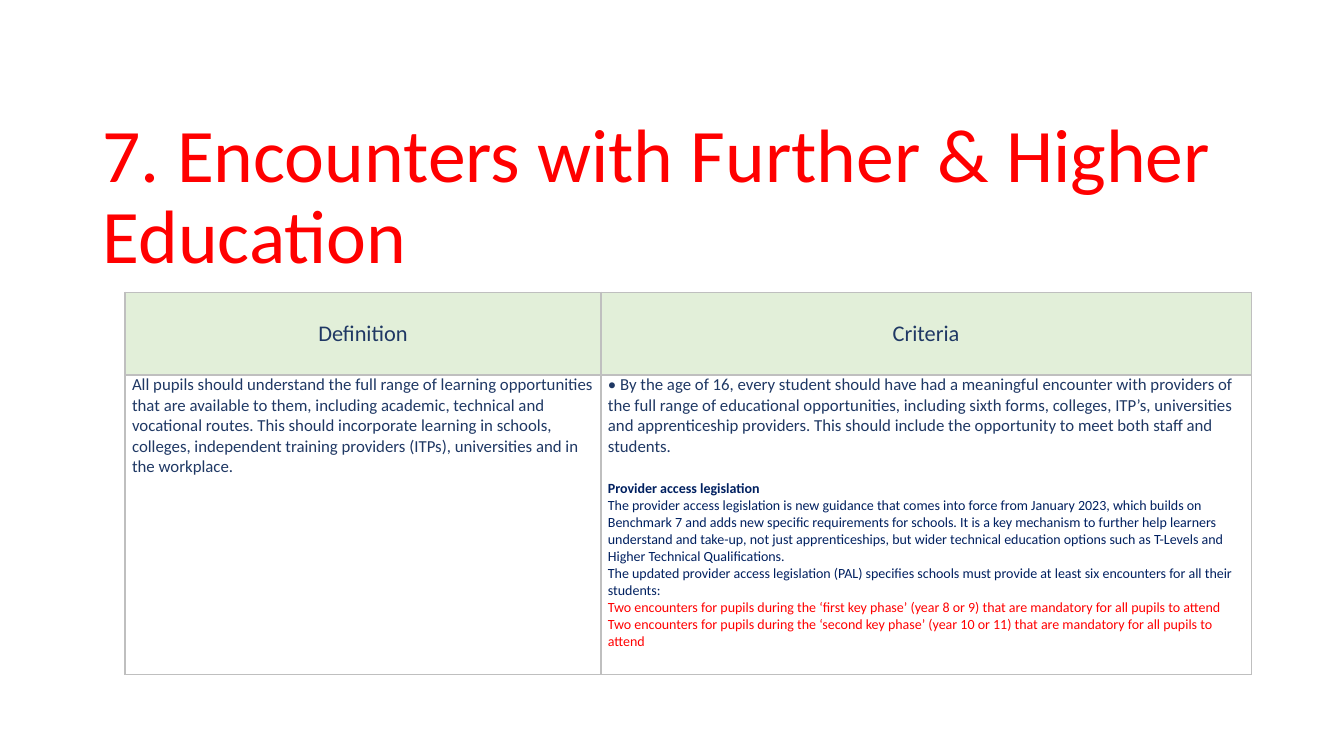
"""Build the slide on encounters with further and higher education."""
from lxml import etree
from pptx import Presentation
from pptx.dml.color import RGBColor
from pptx.enum.text import MSO_ANCHOR, PP_ALIGN
from pptx.oxml.ns import qn
from pptx.util import Inches, Pt

TOP, MIDDLE, BOTTOM = MSO_ANCHOR.TOP, MSO_ANCHOR.MIDDLE, MSO_ANCHOR.BOTTOM
LEFT, CENTER = PP_ALIGN.LEFT, PP_ALIGN.CENTER
RED = RGBColor(0xFF, 0x00, 0x00)
NAVY = RGBColor(0x1F, 0x38, 0x64)
INK = RGBColor(0x00, 0x20, 0x60)
GREEN = RGBColor(0xE2, 0xEF, 0xD9)
GREY = RGBColor(0xBF, 0xBF, 0xBF)
FONT = "Calibri"

TITLE = "7. Encounters with Further & Higher Education"
HEADS = ["Definition", "Criteria"]
COLS = [4.72, 6.45]
ROWS = [0.82, 2.97]
MEANING = (
    "All pupils should understand the full range of learning opportunities that "
    "are available to them, including academic, technical and vocational routes. "
    "This should incorporate learning in schools, colleges, independent training "
    "providers (ITPs), universities and in the workplace."
)
DUTY = (
    "• By the age of 16, every student should have had a meaningful encounter with "
    "providers of the full range of educational opportunities, including sixth "
    "forms, colleges, ITP’s, universities and apprenticeship providers. This should "
    "include the opportunity to meet both staff and students."
)
LAW = "Provider access legislation"
LAW_TEXT = [
    "The provider access legislation is new guidance that comes into force from "
    "January 2023, which builds on Benchmark 7 and adds new specific requirements "
    "for schools. It is a key mechanism to further help learners understand and "
    "take-up, not just apprenticeships, but wider technical education options such "
    "as T-Levels and Higher Technical Qualifications.",
    "The updated provider access legislation (PAL) specifies schools must provide "
    "at least six encounters for all their students:",
]
PHASES = [
    f"Two encounters for pupils during the ‘{phase} key phase’ (year {years}) "
    "that are mandatory for all pupils to attend"
    for phase, years in [("first", "8 or 9"), ("second", "10 or 11")]
]


def style(para, size, color, bold=False, align=LEFT):
    """Format a paragraph and its runs."""
    para.alignment = align
    for run in para.runs:
        run.font.name = FONT
        run.font.size = Pt(size)
        run.font.bold = bold
        run.font.color.rgb = color


def add_title(slide):
    """Add the slide heading."""
    box = slide.shapes.add_textbox(Inches(0.92), Inches(1.23), Inches(11.5), Inches(1.6))
    frame = box.text_frame
    frame.word_wrap = True
    frame.vertical_anchor = BOTTOM
    frame.text = TITLE
    para = frame.paragraphs[0]
    para.line_spacing = 0.9
    style(para, 54, RED)


def add_edges(cell):
    """Draw a thin grey line on each side of a cell."""
    props = cell._tc.get_or_add_tcPr()
    for index, side in enumerate(("lnL", "lnR", "lnT", "lnB")):
        line = etree.Element(qn(f"a:{side}"), w=str(Pt(1)))
        fill = etree.SubElement(line, qn("a:solidFill"))
        etree.SubElement(fill, qn("a:srgbClr"), val=str(GREY))
        props.insert(index, line)


def set_cell(cell, texts, anchor=TOP):
    """Write the paragraphs of a cell and set its margins and edges."""
    cell.margin_left = cell.margin_right = Inches(0.07)
    cell.margin_top = cell.margin_bottom = Inches(0)
    cell.vertical_anchor = anchor
    cell.text_frame.text = "\n".join(text for text, *_ in texts)
    for para, (_, *look) in zip(cell.text_frame.paragraphs, texts):
        style(para, *look)
    add_edges(cell)


def add_grid(slide):
    """Add the table of definition and criteria."""
    frame = slide.shapes.add_table(
        len(ROWS), len(COLS), Inches(1.24), Inches(2.9),
        Inches(sum(COLS)), Inches(sum(ROWS)),
    )
    table = frame.table
    table.first_row = table.horz_banding = False
    for column, width in zip(table.columns, COLS):
        column.width = Inches(width)
    for row, height in zip(table.rows, ROWS):
        row.height = Inches(height)

    rules = [(DUTY, 12, NAVY), (LAW, 10, INK, True)]
    rules += [(text, 10, INK) for text in LAW_TEXT]
    rules += [(text, 10, RED) for text in PHASES]
    for index, (head, body) in enumerate(zip(HEADS, [[(MEANING, 12, NAVY)], rules])):
        top, cell = table.cell(0, index), table.cell(1, index)
        top.fill.solid()
        top.fill.fore_color.rgb = GREEN
        cell.fill.background()
        set_cell(top, [(head, 16, NAVY, False, CENTER)], MIDDLE)
        set_cell(cell, body)
    table.cell(1, 1).text_frame.paragraphs[1].space_before = Pt(17)


def main():
    """Build and save the slide."""
    deck = Presentation()
    deck.slide_width, deck.slide_height = Inches(13.33), Inches(7.5)
    slide = deck.slides.add_slide(deck.slide_layouts[6])
    add_title(slide)
    add_grid(slide)
    deck.save("out.pptx")


if __name__ == "__main__":
    main()
